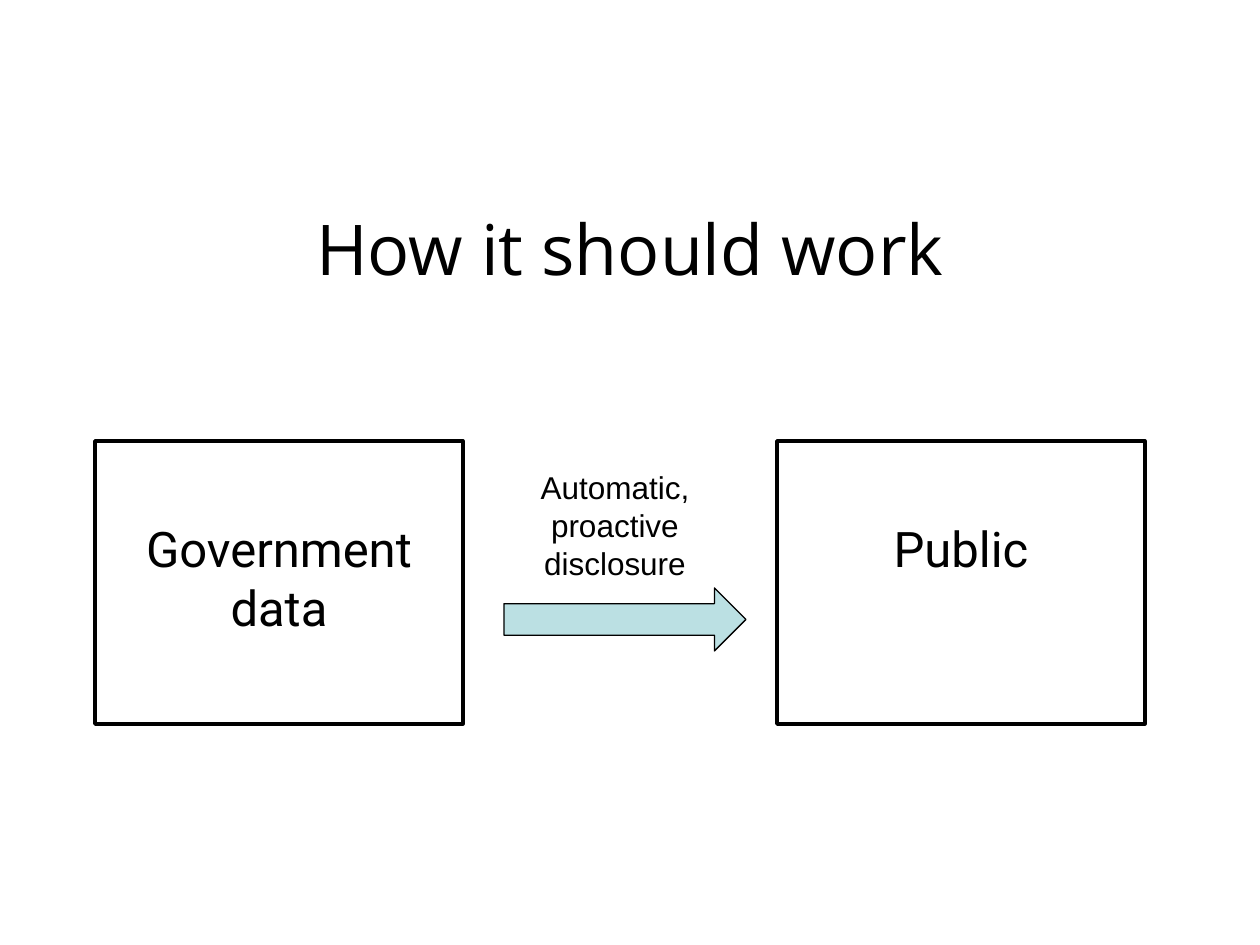
from collections import namedtuple
from dataclasses import dataclass

from pptx import Presentation
from pptx import util as u
from pptx.dml.color import RGBColor
from pptx.enum import shapes, text

PX = u.Inches(1) / 126
Box = namedtuple("Box", "left top width height")


@dataclass(frozen=True)
class Theme:
    ink: RGBColor = RGBColor(0x00, 0x00, 0x00)
    paper: RGBColor = RGBColor(0xFF, 0xFF, 0xFF)
    arrow: RGBColor = RGBColor(0xBB, 0xE0, 0xE3)
    title: tuple = ("Open Sans", 40)
    party: tuple = ("Roboto", 28)
    label: tuple = ("Arial", 18)


THEME = Theme()


def emu(box):
    return [round(length * PX) for length in box]


def write(shape, wording, style, anchor=text.MSO_ANCHOR.TOP):
    """Set centred, wrapped text in a (font, size) style."""
    frame = shape.text_frame
    frame.word_wrap = True
    frame.vertical_anchor = anchor
    frame.text = wording
    paragraph = frame.paragraphs[0]
    paragraph.alignment = text.PP_ALIGN.CENTER
    font = paragraph.runs[0].font
    font.name, size = style
    font.size = u.Pt(size)
    font.color.rgb = THEME.ink


def add_outlined(slide, kind, box, fill, line_width):
    shape = slide.shapes.add_shape(kind, *emu(box))
    shape.shadow.inherit = False
    shape.fill.solid()
    shape.fill.fore_color.rgb = fill
    shape.line.color.rgb = THEME.ink
    shape.line.width = u.Pt(line_width)
    return shape


def add_title(slide, box, wording):
    write(slide.shapes.add_textbox(*emu(box)), wording, THEME.title,
          text.MSO_ANCHOR.MIDDLE)


def add_party(slide, box, wording):
    """Draw a bordered box whose text starts below a deep top margin."""
    shape = add_outlined(slide, shapes.MSO_SHAPE.RECTANGLE, box, THEME.paper, 2)
    write(shape, wording, THEME.party)
    shape.text_frame.margin_top = round(78 * PX)


def add_flow(slide, box, wording):
    """Draw an arrow along the bottom of the box with its label above."""
    label_height, arrow_height, inset = 127, 63, 10
    label = Box(box.left, box.top, box.width - inset, label_height)
    arrow = Box(box.left + inset, box.top + box.height - arrow_height,
                box.width - inset, arrow_height)
    add_outlined(slide, shapes.MSO_SHAPE.RIGHT_ARROW, arrow, THEME.arrow, 0.75)
    write(slide.shapes.add_textbox(*emu(label)), wording, THEME.label)


def add_disclosure_diagram(slide, box):
    party_width = 368
    government = Box(box.left, box.top, party_width, box.height)
    public = government._replace(left=box.left + box.width - party_width)
    add_party(slide, government, "Government data")
    add_party(slide, public, "Public")
    flow = Box(box.left + 399, box.top + 21, 252, 189)
    add_flow(slide, flow, "Automatic, proactive disclosure")


def main():
    presentation = Presentation()
    presentation.slide_width, presentation.slide_height = emu((1260, 945))
    slide = presentation.slides.add_slide(presentation.slide_layouts[6])
    add_title(slide, Box(95, 168, 1070, 158), "How it should work")
    add_disclosure_diagram(slide, Box(95, 441, 1050, 283))
    presentation.save("out.pptx")


if __name__ == "__main__":
    main()
